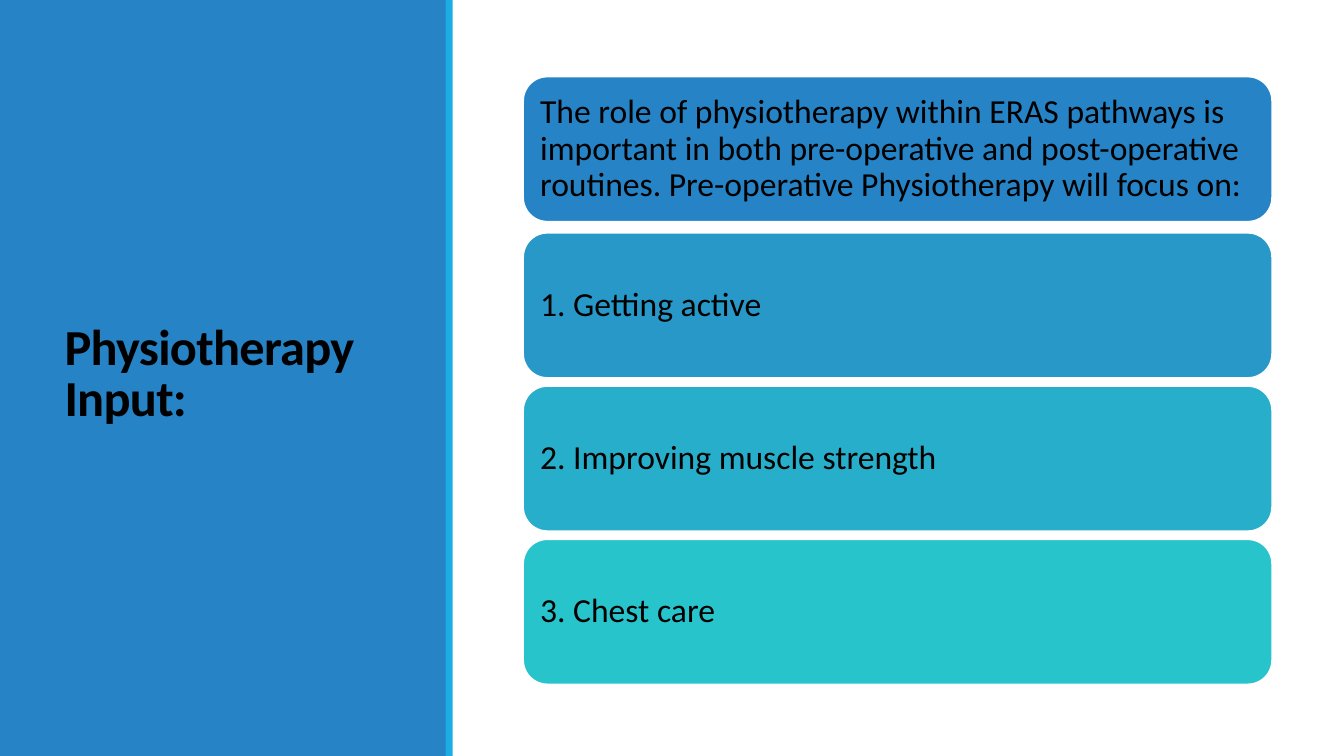
from pptx import Presentation
from pptx.dml.color import RGBColor
from pptx.enum.shapes import MSO_SHAPE
from pptx.enum.text import MSO_ANCHOR, MSO_AUTO_SIZE, PP_ALIGN
from pptx.util import Pt

RECTANGLE = MSO_SHAPE.RECTANGLE
ROUNDED = MSO_SHAPE.ROUNDED_RECTANGLE
MIDDLE = MSO_ANCHOR.MIDDLE
LEFT = PP_ALIGN.LEFT
NO_AUTOFIT = MSO_AUTO_SIZE.NONE

COLOURS = {
    "text": "000000",
    "white": "FFFFFF",
    "panel": "2683C6",
    "accent": "1CADE4",
    "active": "2798C8",
    "strength": "27AECA",
    "chest": "28C4CC",
}

STATEMENTS = [
    (54.72, "panel", "The role of physiotherapy within ERAS pathways is important in both "
     "pre-operative and post-operative routines. Pre-operative Physiotherapy will focus on:"),
    (166.32, "active", "1. Getting active"),
    (275.76, "strength", "2. Improving muscle strength"),
    (385.2, "chest", "3. Chest care"),
]


def colour(name):
    return RGBColor.from_string(COLOURS[name])


def write(frame, text, size=24, bold=False, line_spacing=0.9, tracking=0):
    frame.word_wrap = True
    frame.auto_size = NO_AUTOFIT
    frame.vertical_anchor = MIDDLE
    frame.margin_left = frame.margin_right = Pt(7.2)
    frame.margin_top = frame.margin_bottom = Pt(7.2)
    para = frame.paragraphs[0]
    para.alignment = LEFT
    para.line_spacing = line_spacing
    span = para.add_run()
    span.text = text
    span.font.name = "Calibri"
    span.font.size = Pt(size)
    span.font.bold = bold
    span.font.color.rgb = colour("text")
    if tracking:
        span.font._element.set("spc", str(round(tracking * 100)))


class SlideBuilder:
    def __init__(self, page):
        self.page = page

    def block(self, left, top, width, height, fill, kind=RECTANGLE):
        box = self.page.shapes.add_shape(kind, Pt(left), Pt(top), Pt(width), Pt(height))
        box.shadow.inherit = False
        box.fill.solid()
        box.fill.fore_color.rgb = colour(fill)
        box.line.fill.background()
        return box

    def card(self, left, top, width, height, fill, text):
        box = self.block(left, top, width, height, fill, ROUNDED)
        box.line.color.rgb = colour("white")
        box.line.width = Pt(1.25)
        write(box.text_frame, text)

    def title(self, left, top, width, height, text):
        box = self.page.shapes.title
        box.left, box.top, box.width, box.height = Pt(left), Pt(top), Pt(width), Pt(height)
        write(box.text_frame, text, size=36, bold=True, line_spacing=0.85, tracking=-0.5)
        box.element.getparent().append(box.element)


def main():
    deck = Presentation()
    deck.slide_width, deck.slide_height = Pt(960), Pt(540)
    builder = SlideBuilder(deck.slides.add_slide(deck.slide_layouts[5]))
    builder.block(0, 0, 319, 540, "panel")
    builder.title(38.9, 41, 242.6, 454.3, "Physiotherapy Input:")
    builder.block(318.4, 0, 5, 540, "accent")
    for top, fill, text in STATEMENTS:
        builder.card(373.7, top, 535, 103.7, fill, text)
    deck.save("out.pptx")


if __name__ == "__main__":
    main()
